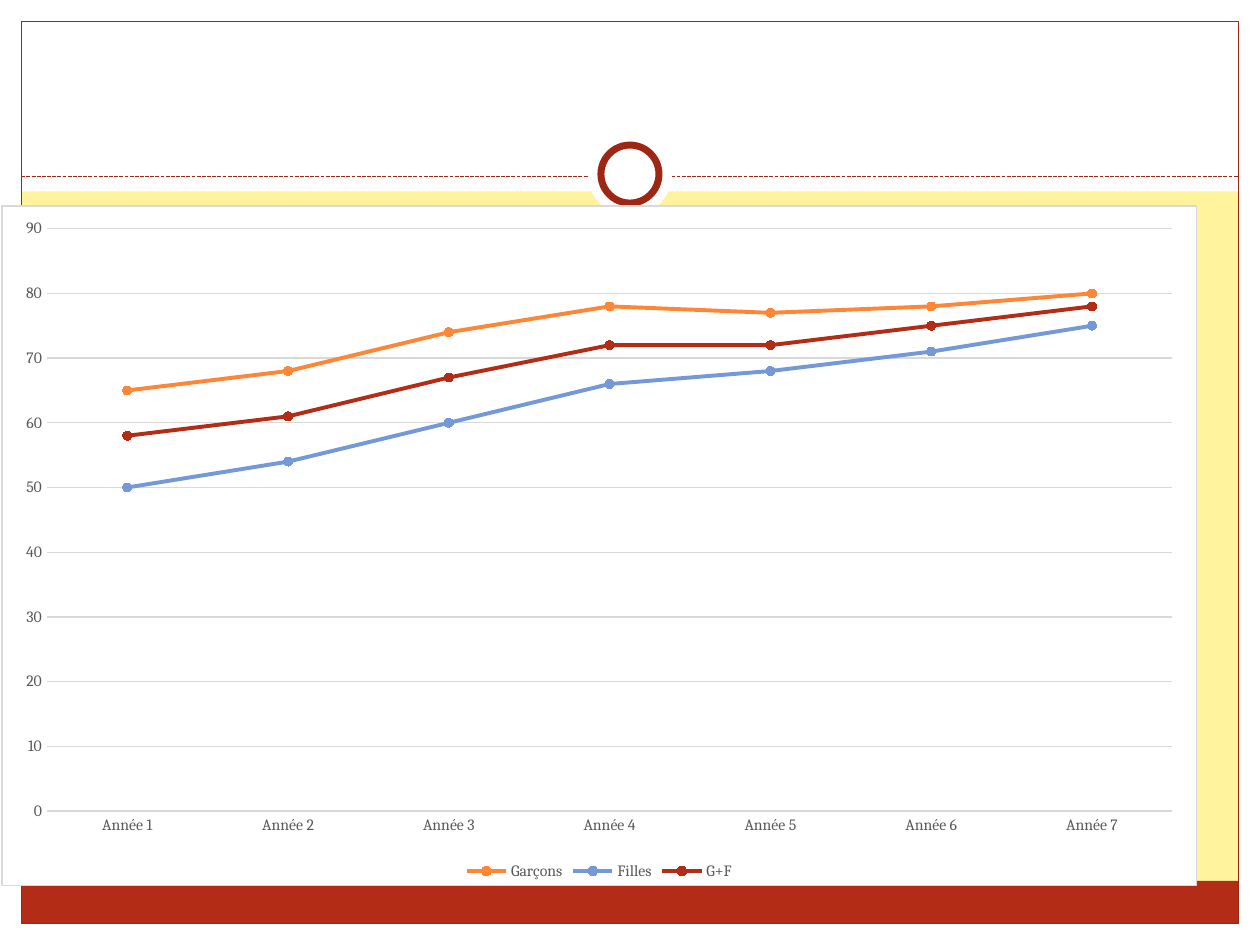
from pptx import Presentation, util as u
from pptx.chart.data import CategoryChartData
from pptx.dml.color import RGBColor
from pptx.enum import chart as ch, dml, shapes
from pptx.oxml import parse_xml
from pptx.oxml.ns import nsdecls, qn

WHITE = RGBColor(0xFF, 0xFF, 0xFF)
CREAM = RGBColor(0xFF, 0xF3, 0x9D)
RED = RGBColor(0xB3, 0x2C, 0x16)
DARK_RED = RGBColor(0x9E, 0x27, 0x13)
ORANGE = RGBColor(0xFE, 0x86, 0x37)
BLUE = RGBColor(0x75, 0x98, 0xD9)
GREY = RGBColor(0xD9, 0xD9, 0xD9)
TEXT_GREY = RGBColor(0x59, 0x59, 0x59)
BLACK = RGBColor(0, 0, 0)
FONT = "Cambria"

# Content
YEARS = [f"Année {n}" for n in range(1, 8)]
SERIES = [
    ("Garçons", ORANGE, (65, 68, 74, 78, 77, 78, 80)),
    ("Filles", BLUE, (50, 54, 60, 66, 68, 71, 75)),
    ("G+F", RED, (58, 61, 67, 72, 72, 75, 78)),
]

# Layout in centimetres
W, H = 25.4, 19.05
EDGE = 0.43
HEADER_H = 3.86
FOOTER_H = 0.86
RULE_Y = 3.56
RING_Y = 3.51
CHART = (0.03, 4.14, 24.1, 13.72)


def set_line(line, color, width):
    line.color.rgb = color
    line.width = u.Pt(width)


def set_font(font, size, color):
    font.name = FONT
    font.size = u.Pt(size)
    font.color.rgb = color


def add_part(s, kind, box, fill=None, line=None, width=0.75):
    sp = s.shapes.add_shape(kind, *map(u.Cm, box))
    sp.shadow.inherit = False
    if fill is None:
        sp.fill.background()
    else:
        sp.fill.solid()
        sp.fill.fore_color.rgb = fill
    if line is None:
        sp.line.fill.background()
    else:
        set_line(sp.line, line, width)
    return sp


def add_disc(s, diameter, **style):
    box = (W / 2 - diameter / 2, RING_Y - diameter / 2, diameter, diameter)
    return add_part(s, shapes.MSO_SHAPE.OVAL, box, WHITE, **style)


def add_frame(s):
    rect = shapes.MSO_SHAPE.RECTANGLE
    inner_w = W - 2 * EDGE

    # White margins
    for box in (
        (0, H - EDGE, W, EDGE),
        (0, 0, W, HEADER_H),
        (0, 0, EDGE, H),
        (W - EDGE, 0, EDGE, H),
    ):
        add_part(s, rect, box, WHITE)

    # Footer band and outline
    add_part(s, rect, (EDGE, H - EDGE - FOOTER_H, inner_w, FOOTER_H), RED)
    add_part(s, rect, (EDGE, EDGE, inner_w, H - 2 * EDGE), line=DARK_RED)

    # Dashed rule with the ring on it
    rule = s.shapes.add_connector(
        shapes.MSO_CONNECTOR.STRAIGHT,
        *map(u.Cm, (EDGE, RULE_Y, W - EDGE, RULE_Y)))
    set_line(rule.line, DARK_RED, 0.75)
    rule.line.dash_style = dml.MSO_LINE.SQUARE_DOT
    rule.element.spPr.append(parse_xml(f"<a:effectLst {nsdecls('a')}/>"))
    add_disc(s, 1.7)
    add_disc(s, 1.17, line=DARK_RED, width=4)


def add_line_chart(s):
    data = CategoryChartData()
    data.categories = YEARS
    for name, _, values in SERIES:
        data.add_series(name, values)
    chart = s.shapes.add_chart(
        ch.XL_CHART_TYPE.LINE_MARKERS, *map(u.Cm, CHART), data).chart
    chart.has_title = False
    set_font(chart.font, 10, BLACK)

    # Chart area: white with a thin grey border
    chart.element.find(qn("c:chart")).addnext(parse_xml(
        f"<c:spPr {nsdecls('c', 'a')}>"
        f'<a:solidFill><a:srgbClr val="{WHITE}"/></a:solidFill>'
        f'<a:ln w="{u.Pt(0.75)}"><a:solidFill><a:srgbClr val="{GREY}"/>'
        "</a:solidFill></a:ln></c:spPr>"))

    # Legend
    chart.has_legend = True
    chart.legend.position = ch.XL_LEGEND_POSITION.BOTTOM
    chart.legend.include_in_layout = False
    set_font(chart.legend.font, 9, TEXT_GREY)

    # Axes
    for axis in (chart.category_axis, chart.value_axis):
        axis.major_tick_mark = axis.minor_tick_mark = ch.XL_TICK_MARK.NONE
        set_font(axis.tick_labels.font, 9, TEXT_GREY)
    set_line(chart.category_axis.format.line, GREY, 0.75)
    values = chart.value_axis
    values.minimum_scale, values.maximum_scale, values.major_unit = 0, 90, 10
    values.format.line.fill.background()
    set_line(values.major_gridlines.format.line, GREY, 0.75)

    # Series
    plot = chart.plots[0]
    plot.vary_by_categories = False
    for series, (_, color, _) in zip(plot.series, SERIES):
        series.smooth = False
        set_line(series.format.line, color, 2.25)
        marker = series.marker
        marker.style = ch.XL_MARKER_STYLE.CIRCLE
        marker.size = 5
        marker.format.fill.solid()
        marker.format.fill.fore_color.rgb = color
        set_line(marker.format.line, color, 0.75)


def main():
    prs = Presentation()
    prs.slide_width, prs.slide_height = u.Cm(W), u.Cm(H)
    s = prs.slides.add_slide(prs.slide_layouts[6])
    s.background.fill.solid()
    s.background.fill.fore_color.rgb = CREAM
    add_frame(s)
    add_line_chart(s)
    prs.save("out.pptx")


if __name__ == "__main__":
    main()
